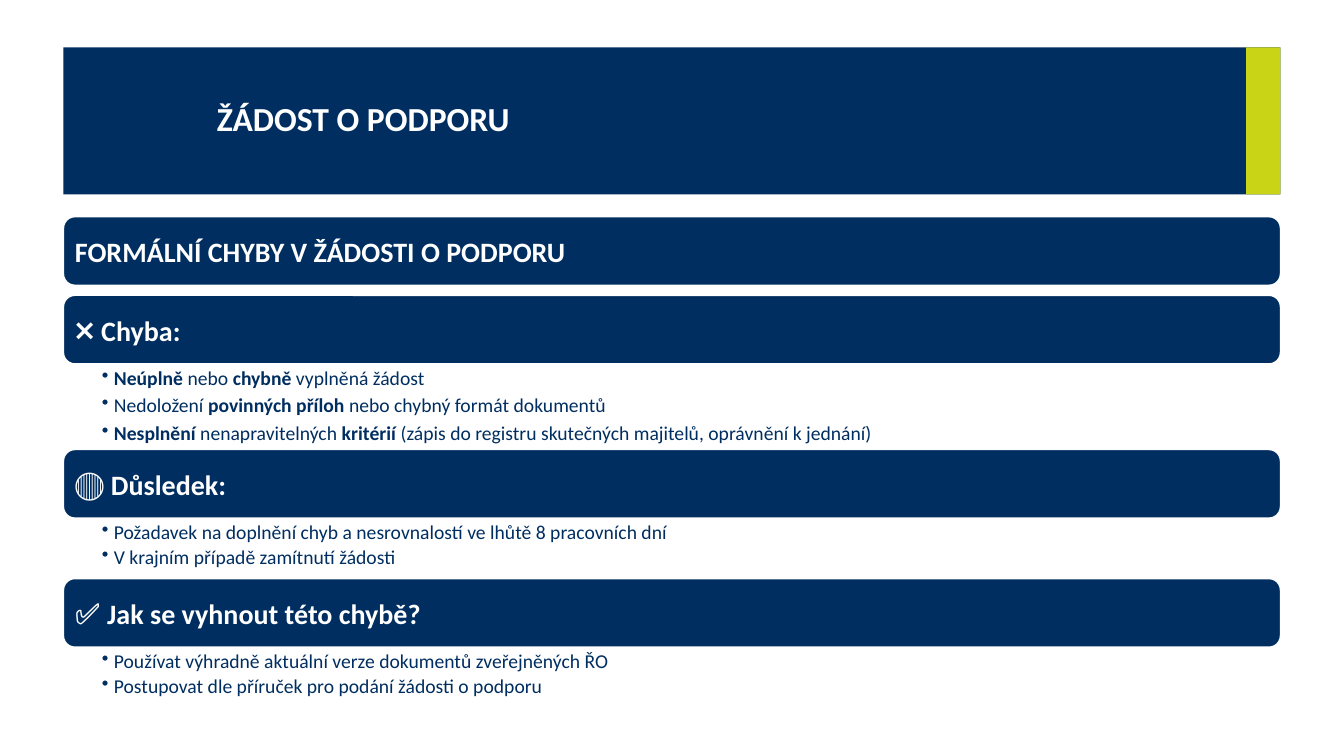
from dataclasses import dataclass

from lxml.etree import SubElement
from pptx import Presentation
from pptx.dml.color import RGBColor
from pptx.enum.shapes import MSO_SHAPE
from pptx.enum.text import MSO_ANCHOR, MSO_AUTO_SIZE, PP_ALIGN
from pptx.oxml.ns import qn
from pptx.util import Inches, Pt


@dataclass(frozen=True)
class Theme:
    navy: RGBColor = RGBColor(0x00, 0x2E, 0x60)
    lime: RGBColor = RGBColor(0xC9, 0xD4, 0x17)
    white: RGBColor = RGBColor(0xFF, 0xFF, 0xFF)
    font: str = "Calibri"
    title_size: Pt = Pt(24)
    symbol_size: Pt = Pt(21)
    heading_size: Pt = Pt(20)
    bullet_size: Pt = Pt(14)


THEME = Theme()
LEFT, WIDTH = 0.63, 12.07
BANNER_TOP, BANNER_HEIGHT = 0.47, 1.46
STRIPE_WIDTH = 0.34
BAR_HEIGHT = 0.68

# Top of the bar, symbol, heading, line spacing of the later bullets, bullets.
# Text between ** marks is bold.
SECTIONS = [
    (2.15, "", "FORMÁLNÍ CHYBY V ŽÁDOSTI O PODPORU", 1.0, []),
    (2.93, "❌ ", "Chyba:", 1.0, [
        "**Neúplně** nebo **chybně** vyplněná žádost",
        "Nedoložení **povinných příloh **nebo chybný formát dokumentů",
        "**Nesplnění** nenapravitelných **kritérií** (zápis do registru "
        "skutečných majitelů, oprávnění k jednání)",
    ]),
    (4.46, "🔴 ", "Důsledek:", 0.9, [
        "Požadavek na doplnění chyb a nesrovnalostí ve lhůtě 8 pracovních dní",
        "V krajním případě zamítnutí žádosti",
    ]),
    (5.74, "✅ ", "Jak se vyhnout této chybě?", 0.9, [
        "Používat výhradně aktuální verze dokumentů zveřejněných ŘO",
        "Postupovat dle příruček pro podání žádosti o podporu",
    ]),
]


def add_block(kind, left, top, width, height, color):
    block = slide.shapes.add_shape(
        kind, Inches(left), Inches(top), Inches(width), Inches(height))
    block.shadow.inherit = False
    block.fill.solid()
    block.fill.fore_color.rgb = color
    block.line.fill.background()
    return block


def set_frame(frame, left, top, right, bottom, anchor):
    """Set the insets (in inches), wrapping and anchor of a text frame."""
    frame.margin_left, frame.margin_top = Inches(left), Inches(top)
    frame.margin_right, frame.margin_bottom = Inches(right), Inches(bottom)
    frame.word_wrap = True
    frame.auto_size = MSO_AUTO_SIZE.NONE
    frame.vertical_anchor = anchor


presentation = Presentation()
presentation.slide_width = Inches(13.33)
presentation.slide_height = Inches(7.5)
slide = presentation.slides.add_slide(presentation.slide_layouts[5])

# Banner with the title
add_block(MSO_SHAPE.RECTANGLE, LEFT, BANNER_TOP, WIDTH, BANNER_HEIGHT, THEME.navy)
stripe = add_block(MSO_SHAPE.RECTANGLE, LEFT + WIDTH - STRIPE_WIDTH, BANNER_TOP,
                   STRIPE_WIDTH, BANNER_HEIGHT, THEME.lime)

title = slide.shapes.title
stripe.element.addnext(title.element)
title.left, title.top = Inches(2.15), Inches(BANNER_TOP)
title.width, title.height = Inches(9.96), Inches(BANNER_HEIGHT)
title.text_frame.text = "ŽÁDOST O PODPORU"
set_frame(title.text_frame, 0, 0, 0, 0, MSO_ANCHOR.MIDDLE)
paragraph = title.text_frame.paragraphs[0]
paragraph.alignment = PP_ALIGN.LEFT
paragraph.line_spacing = 0.9
paragraph.font.name = THEME.font
paragraph.font.size = THEME.title_size
paragraph.font.bold = True
paragraph.font.color.rgb = THEME.white

# Heading bars, each followed by its bullets
for top, symbol, heading, later_spacing, bullets in SECTIONS:
    bar = add_block(MSO_SHAPE.ROUNDED_RECTANGLE, LEFT, top, WIDTH, BAR_HEIGHT, THEME.navy)
    bar.line.color.rgb = THEME.white
    bar.line.width = Pt(1)
    set_frame(bar.text_frame, 0.08, 0.08, 0.08, 0.08, MSO_ANCHOR.MIDDLE)
    paragraph = bar.text_frame.paragraphs[0]
    paragraph.alignment = PP_ALIGN.LEFT
    paragraph.font.name = THEME.font
    paragraph.font.bold = True
    paragraph.font.color.rgb = THEME.white
    for text, size in ((symbol, THEME.symbol_size), (heading, THEME.heading_size)):
        if text:
            run = paragraph.add_run()
            run.text = text
            run.font.size = size

    if not bullets:
        continue
    box_height = 0.86 if len(bullets) == 3 else 0.6
    box = slide.shapes.add_textbox(Inches(LEFT), Inches(top + BAR_HEIGHT),
                                   Inches(WIDTH), Inches(box_height))
    set_frame(box.text_frame, 0.38, 0.02, 0.11, 0.02, MSO_ANCHOR.TOP)
    for index, bullet in enumerate(bullets):
        paragraph = box.text_frame.paragraphs[0] if index == 0 else box.text_frame.add_paragraph()
        paragraph.level = 1
        properties = paragraph._p.get_or_add_pPr()
        properties.set("marL", str(Inches(0.12)))
        properties.set("indent", str(-Inches(0.12)))
        SubElement(properties, qn("a:buChar"), char="•")
        paragraph.space_after = Pt(2.8)
        if index > 0:
            paragraph.line_spacing = later_spacing
        paragraph.font.name = THEME.font
        paragraph.font.size = THEME.bullet_size
        paragraph.font.color.rgb = THEME.navy
        for position, text in enumerate(bullet.split("**")):
            if text:
                run = paragraph.add_run()
                run.text = text
                run.font.bold = position % 2 == 1

presentation.save("out.pptx")
